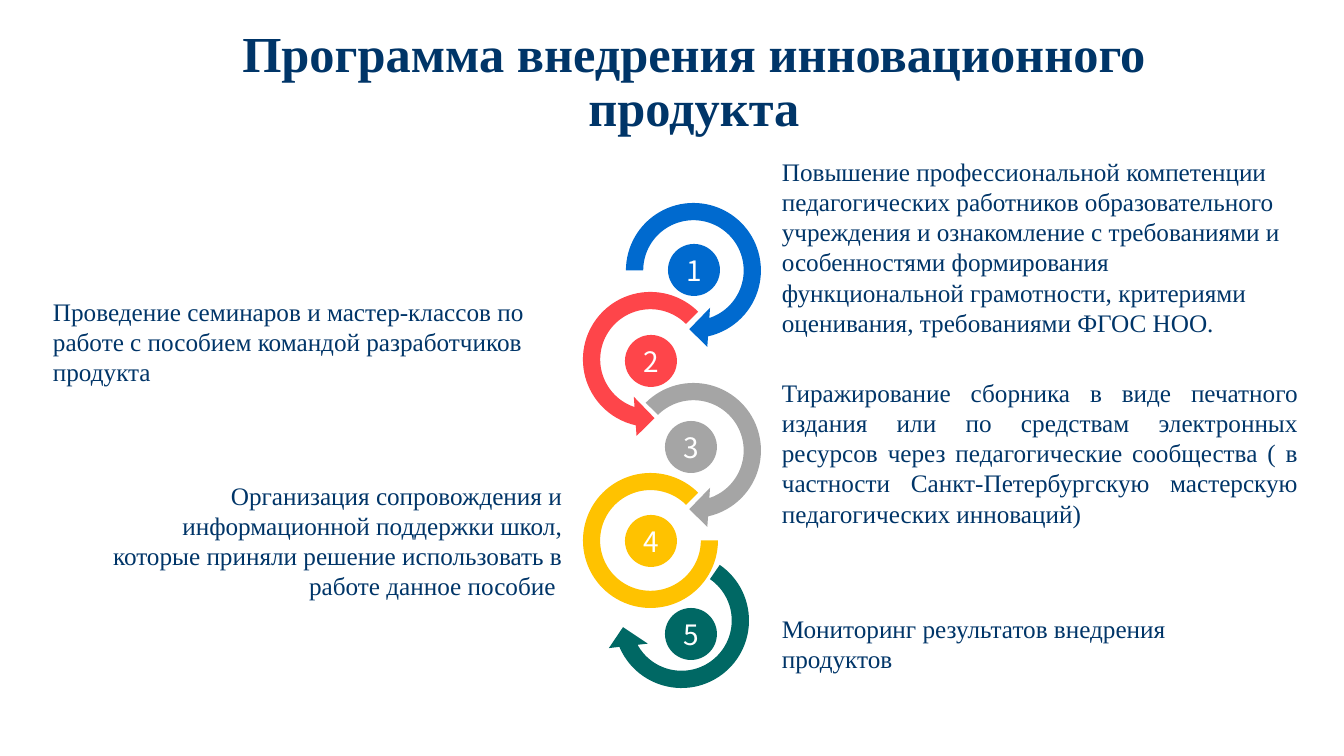
from dataclasses import dataclass

from pptx import Presentation
from pptx.dml.color import RGBColor
from pptx.enum import shapes, text
from pptx.util import Emu, Pt

KIND = shapes.MSO_SHAPE
ALIGN = text.PP_ALIGN
EMU_PER_PX = 914400 / 100.8


@dataclass(frozen=True)
class Theme:
    """Colours, fonts and type sizes of the slide."""
    navy: str = "003568"
    white: str = "FFFFFF"
    blue: str = "006ACF"
    red: str = "FE454A"
    grey: str = "A5A5A5"
    yellow: str = "FFC200"
    green: str = "006864"
    text_font: str = "Times New Roman"
    number_font: str = "Noto Sans CJK SC"
    title_size: int = 36
    body_size: int = 18
    number_size: int = 20


THEME = Theme()
TITLE = "Программа внедрения инновационного продукта"
RING_SIZE = 157
ARC_SIZE = 135
BADGE_SIZE = 52
BADGE_TEXT = {"margin_left": 0, "margin_right": 0, "margin_top": 0, "margin_bottom": 0,
              "word_wrap": False, "vertical_anchor": text.MSO_ANCHOR.MIDDLE}
NOTE_TEXT = {"word_wrap": True, "auto_size": text.MSO_AUTO_SIZE.SHAPE_TO_FIT_TEXT}
TITLE_TEXT = {"word_wrap": True, "auto_size": text.MSO_AUTO_SIZE.NONE,
              "vertical_anchor": text.MSO_ANCHOR.MIDDLE}

RIGHT_ARROW = (0.11, 11.423, 45, 135, 0.125)
FIRST_ARROW = (0.11, 11.423, 45, 108, 0.125)
LEFT_ARROW = (0.11, 11.423, 63, 189, 0.125)
OPEN_ARC = (0, 189, 0.127)

STEPS = [
    ("3", THEME.grey, KIND.CIRCULAR_ARROW, (615, 372), RING_SIZE, RIGHT_ARROW, (665, 421)),
    ("4", THEME.yellow, KIND.BLOCK_ARC, (583, 473), ARC_SIZE, OPEN_ARC, (625, 515)),
    ("2", THEME.red, KIND.LEFT_CIRCULAR_ARROW, (572, 281), RING_SIZE, LEFT_ARROW, (625, 335)),
    ("1", THEME.blue, KIND.CIRCULAR_ARROW, (615, 192), RING_SIZE, FIRST_ARROW, (668, 244)),
    ("5", THEME.green, KIND.LEFT_CIRCULAR_ARROW, (603, 542), RING_SIZE, LEFT_ARROW, (665, 608)),
]

NOTES = [
    ((43, 291, 528, 102), ALIGN.LEFT,
     "Проведение семинаров и мастер-классов по работе с пособием командой "
     "разработчиков продукта"),
    ((772, 372, 536, 163), ALIGN.JUSTIFY,
     "Тиражирование сборника в виде печатного издания или по средствам электронных "
     "ресурсов через педагогические сообщества ( в частности Санкт-Петербургскую "
     "мастерскую педагогических инноваций)"),
    ((82, 475, 490, 132), ALIGN.RIGHT,
     "Организация сопровождения и информационной поддержки школ, которые приняли "
     "решение использовать в работе данное пособие "),
    ((772, 608, 457, 72), ALIGN.LEFT, "Мониторинг результатов внедрения продуктов"),
    ((772, 151, 519, 194), ALIGN.LEFT,
     "Повышение профессиональной компетенции педагогических работников "
     "образовательного учреждения и ознакомление с требованиями и особенностями "
     "формирования функциональной грамотности, критериями оценивания, "
     "требованиями ФГОС НОО."),
]


def px(length):
    """Turn pixels into EMU."""
    return Emu(round(length * EMU_PER_PX))


def set_all(target, values):
    """Set every attribute named in a dict."""
    for name, value in values.items():
        setattr(target, name, value)


def write(shape, words, frame, align, color, **font):
    """Put one formatted paragraph into a shape."""
    set_all(shape.text_frame, frame)
    paragraph = shape.text_frame.paragraphs[0]
    paragraph.alignment = align
    run = paragraph.add_run()
    run.text = words
    set_all(run.font, font)
    run.font.color.rgb = RGBColor.from_string(color)
    return paragraph


def add_solid(slide, kind, position, size, color):
    """Add a square preset shape with a plain fill and no outline."""
    shape = slide.shapes.add_shape(kind, *map(px, (*position, size, size)))
    shape.shadow.inherit = False
    shape.fill.solid()
    shape.fill.fore_color.rgb = RGBColor.from_string(color)
    shape.line.fill.background()
    return shape


def add_step(slide, number, color, kind, position, size, adjustments, badge_position):
    """Add a ring with its numbered badge and return the ring."""
    ring = add_solid(slide, kind, position, size, color)
    for index, value in enumerate(adjustments):
        ring.adjustments[index] = value
    badge = add_solid(slide, KIND.OVAL, badge_position, BADGE_SIZE, color)
    write(badge, number, BADGE_TEXT, ALIGN.CENTER, THEME.white,
          name=THEME.number_font, size=Pt(THEME.number_size))
    return ring


def add_note(slide, box, align, words):
    """Add the description of one step."""
    note = slide.shapes.add_textbox(*map(px, box))
    write(note, words, NOTE_TEXT, align, THEME.navy,
          name=THEME.text_font, size=Pt(THEME.body_size))


def set_title(slide):
    """Place and format the slide title."""
    title = slide.shapes.title
    set_all(title, {"left": px(138), "top": px(40), "width": px(1112), "height": px(86)})
    paragraph = write(title, TITLE, TITLE_TEXT, ALIGN.CENTER, THEME.navy,
                      name=THEME.text_font, size=Pt(THEME.title_size), bold=True)
    paragraph.line_spacing = 0.9


def main():
    """Build and save the slide."""
    presentation = Presentation()
    set_all(presentation, {"slide_width": px(1344), "slide_height": px(756)})
    slide = presentation.slides.add_slide(presentation.slide_layouts[5])
    set_title(slide)
    rings = {step[0]: add_step(slide, *step) for step in STEPS}
    rings["5"].rotation = 79.5
    rings["5"]._element.spPr.xfrm.set("flipH", "1")
    for note in NOTES:
        add_note(slide, *note)
    presentation.save("out.pptx")


if __name__ == "__main__":
    main()
